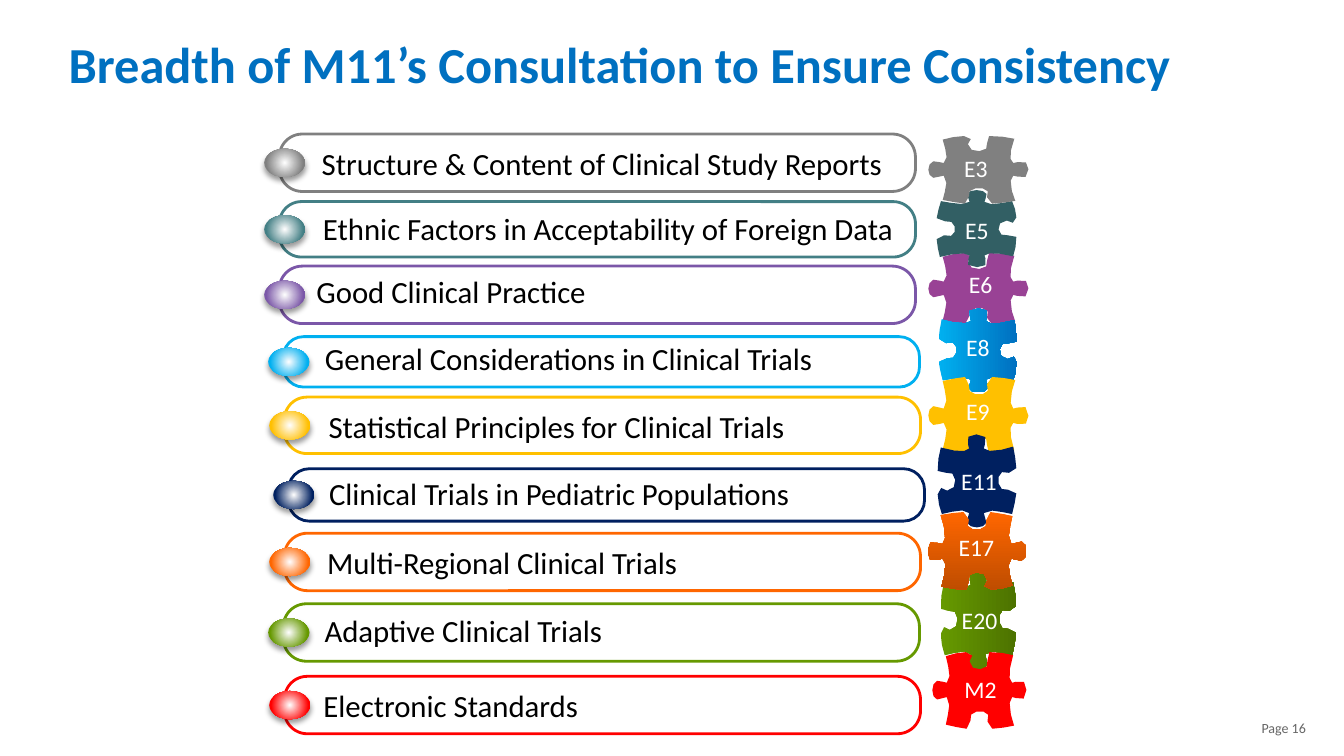
import math

from lxml import etree
from pptx import Presentation
from pptx.dml.color import RGBColor
from pptx.enum.shapes import MSO_SHAPE
from pptx.enum.text import MSO_ANCHOR, PP_ALIGN
from pptx.oxml.ns import qn
from pptx.util import Inches, Pt

ROUND_RECT, OVAL = MSO_SHAPE.ROUNDED_RECTANGLE, MSO_SHAPE.OVAL
LEFT, CENTER, RIGHT = PP_ALIGN.LEFT, PP_ALIGN.CENTER, PP_ALIGN.RIGHT
TOP, MIDDLE = MSO_ANCHOR.TOP, MSO_ANCHOR.MIDDLE
FONT = "Calibri"

WHITE = RGBColor(0xFF, 0xFF, 0xFF)
BLACK = RGBColor(0, 0, 0)
BLUE = RGBColor(0x00, 0x70, 0xC0)
PAGE_GRAY = RGBColor(0x66, 0x66, 0x66)
GRAY = RGBColor(0x80, 0x80, 0x80)
TEAL = RGBColor(0x43, 0x7F, 0x85)
DARK_TEAL = RGBColor(0x32, 0x5F, 0x64)
VIOLET = RGBColor(0x7B, 0x57, 0xA8)
PURPLE = RGBColor(0x99, 0x42, 0x95)
SKY = RGBColor(0x00, 0xB0, 0xF0)
GOLD = RGBColor(0xFF, 0xC0, 0x00)
NAVY = RGBColor(0x00, 0x20, 0x60)
ORANGE = RGBColor(0xFF, 0x66, 0x00)
RUST = RGBColor(0xBF, 0x4D, 0x00)
GREEN = RGBColor(0x66, 0x99, 0x00)
DARK_GREEN = RGBColor(0x4D, 0x73, 0x00)
RED = RGBColor(0xFF, 0x00, 0x00)

BAR_W, PEARL_W, PEARL_H, TEXT_H = 6.31, 0.41, 0.28, 0.46
LABEL_H = 0.38
RIGHTWARD, DOWNWARD = 0, 270

# Topic, colour, bar (left, top, height), text (left, top, width), alignment
TOPICS = [
    ("Structure & Content of Clinical Study Reports", GRAY,
     (2.77, 1.33, 0.57), (2.17, 1.39, 7.6), CENTER),
    ("Ethnic Factors in Acceptability of Foreign Data", TEAL,
     (2.77, 2, 0.55), (2.98, 2.03, 6.1), CENTER),
    ("Good Clinical Practice", VIOLET,
     (2.77, 2.64, 0.57), (3.04, 2.66, 6.1), LEFT),
    ("General Considerations in Clinical Trials", SKY,
     (2.81, 3.34, 0.5), (2.82, 3.32, 5.64), CENTER),
    ("Statistical Principles for Clinical Trials", GOLD,
     (2.82, 3.94, 0.56), (2.7, 4, 5.64), CENTER),
    ("Clinical Trials in Pediatric Populations", NAVY,
     (2.86, 4.65, 0.52), (2.74, 4.66, 5.61), CENTER),
    ("Multi-Regional Clinical Trials", ORANGE,
     (2.82, 5.29, 0.57), (2.86, 5.34, 4.24), CENTER),
    ("Adaptive Clinical Trials", GREEN,
     (2.81, 5.99, 0.57), (3.12, 6.02, 3.61), LEFT),
    ("Electronic Standards", RED,
     (2.82, 6.71, 0.57), (3.11, 6.76, 4.66), LEFT),
]

# Code, box, (sideways, flip x, flip y), colours, gradient angle,
# label (left, top, width); back to front
PIECES = [
    ("E20", (9.33, 5.65, 0.75, 1), (False, False, False),
     (GREEN, DARK_GREEN), RIGHTWARD, (9.39, 5.96, 0.65)),
    ("E6", (9.2, 2.51, 1, 0.71), (True, True, False),
     (PURPLE,), None, (9.48, 2.63, 0.49)),
    ("E5", (9.29, 1.88, 0.79, 0.77), (False, True, True),
     (DARK_TEAL,), None, (9.47, 2.09, 0.44)),
    ("E8", (9.31, 3.06, 0.78, 0.84), (False, True, False),
     (SKY, BLUE), RIGHTWARD, (9.48, 3.25, 0.44)),
    ("E9", (9.2, 3.74, 1, 0.76), (True, True, True),
     (GOLD,), None, (9.4, 3.89, 0.6)),
    ("E11", (9.3, 4.31, 0.78, 0.93), (False, False, False),
     (NAVY,), None, (9.32, 4.58, 0.78)),
    ("E3", (9.2, 1.35, 1, 0.67), (True, True, False),
     (GRAY,), None, (9.43, 1.48, 0.5)),
    ("E17", (9.2, 5.08, 0.99, 0.77), (True, False, True),
     (ORANGE, RUST), DOWNWARD, (9.36, 5.24, 0.65)),
    ("M2", (9.24, 6.47, 0.94, 0.76), (True, True, False),
     (RED,), None, (9.29, 6.65, 0.87)),
]

# Outline of an upright jigsaw piece, 75 across by 100 down:
# each entry is one Bezier curve (two control points and an end point)
PIECE_START = (37, 0)
PIECE_CURVES = [
    ((44, 0), (50, 4), (45, 11)), ((45, 12), (44, 13), (44, 15)),
    ((45, 20), (63, 17), (72, 13)), ((72, 18), (76, 30), (75, 36)),
    ((75, 40), (72, 45), (68, 41)), ((54, 33), (55, 64), (67, 59)),
    ((71, 57), (73, 54), (75, 63)), ((75, 67), (72, 80), (71, 85)),
    ((64, 84), (50, 78), (44, 84)), ((44, 85), (44, 86), (45, 88)),
    ((54, 103), (21, 103), (29, 88)), ((30, 86), (30, 85), (30, 84)),
    ((26, 78), (13, 83), (4, 85)), ((2, 80), (0, 70), (0, 64)),
    ((1, 54), (5, 57), (9, 60)), ((21, 60), (18, 36), (8, 41)),
    ((5, 42), (2, 45), (0, 39)), ((-1, 33), (2, 18), (3, 14)),
    ((18, 19), (28, 19), (30, 15)), ((30, 14), (30, 13), (29, 11)),
    ((25, 3), (31, 0), (37, 0)),
]
STEP_LENGTH = 12


def format_text(sp, text, size, color, align, anchor=TOP, bold=False):
    tf = sp.text_frame
    tf.word_wrap = True
    tf.vertical_anchor = anchor
    p = tf.paragraphs[0]
    p.text = text
    p.alignment = align
    f = p.font
    f.name, f.size, f.bold = FONT, Pt(size), bold
    f.color.rgb = color
    return p


def add_text(s, box, *args, **kwargs):
    sp = s.shapes.add_textbox(*map(Inches, box))
    format_text(sp, *args, **kwargs)


def set_gradient(sp, colors, end=1.0):
    sp.fill.gradient()
    for stop, color, position in zip(sp.fill.gradient_stops, colors, (0, end)):
        stop.color.rgb = color
        stop.position = position


def piece_points():
    """Points along the outline, as fractions of its width and height."""
    points, a = [], PIECE_START
    for b, c, d in PIECE_CURVES:
        length = math.dist(a, b) + math.dist(b, c) + math.dist(c, d)
        steps = max(1, round(length / STEP_LENGTH))
        for i in range(steps):
            t = i / steps
            weights = ((1 - t) ** 3, 3 * t * (1 - t) ** 2, 3 * t * t * (1 - t), t ** 3)
            x, y = (sum(w * q[k] for w, q in zip(weights, (a, b, c, d))) for k in (0, 1))
            points.append((x / 75, y / 100))
        a = d
    return points


def add_piece(s, code, box, turn, colors, angle, label):
    left, top, width, height = box
    sideways, flip_x, flip_y = turn
    outline = []
    for x, y in piece_points():
        if sideways:
            x, y = y, x
        x = 1 - x if flip_x else x
        y = 1 - y if flip_y else y
        outline.append((Inches(left + x * width), Inches(top + y * height)))
    builder = s.shapes.build_freeform(*outline[0])
    builder.add_line_segments(outline[1:], close=True)
    sp = builder.convert_to_shape()
    sp.shadow.inherit = False
    sp.line.fill.background()
    if angle is None:
        sp.fill.solid()
        sp.fill.fore_color.rgb = colors[0]
    else:
        set_gradient(sp, colors)
        sp.fill.gradient_angle = angle
    add_text(s, (*label, LABEL_H), code, 16.9, WHITE, CENTER)


def add_bar(s, color, left, top, height):
    sp = s.shapes.add_shape(ROUND_RECT, *map(Inches, (left, top, BAR_W, height)))
    sp.adjustments[0] = 0.4
    sp.shadow.inherit = False
    sp.fill.background()
    sp.line.color.rgb = color
    sp.line.width = Pt(2)


def add_pearl(s, color, left, top):
    sp = s.shapes.add_shape(OVAL, *map(Inches, (left, top, PEARL_W, PEARL_H)))
    sp.line.fill.background()
    set_gradient(sp, (WHITE, color), end=0.75)
    # Radial gradient from the centre
    grad = sp._element.spPr.find(qn("a:gradFill"))
    grad.remove(grad.find(qn("a:lin")))
    radial = etree.SubElement(grad, qn("a:path"), path="circle")
    etree.SubElement(radial, qn("a:fillToRect"), l="50000", t="50000", r="50000", b="50000")
    # Soft shadow below
    sp.shadow.inherit = False
    effects = sp._element.spPr.find(qn("a:effectLst"))
    shadow = etree.SubElement(effects, qn("a:outerShdw"), blurRad=str(Pt(4)),
                              dist=str(Pt(3)), dir="5400000", rotWithShape="0")
    tint = etree.SubElement(shadow, qn("a:srgbClr"), val=str(BLACK))
    etree.SubElement(tint, qn("a:alpha"), val="40000")


def add_topic(s, topic, color, bar, text, align):
    left, top, height = bar
    add_bar(s, color, left, top, height)
    add_pearl(s, color, left - 0.15, top + (height - PEARL_H) / 2)
    add_text(s, (*text, TEXT_H), topic, 22, BLACK, align)


def main():
    prs = Presentation()
    prs.slide_width, prs.slide_height = Inches(13.33), Inches(7.5)
    s = prs.slides.add_slide(prs.slide_layouts[5])
    # Title and page number
    title = s.shapes.title
    title.left, title.top, title.width, title.height = map(Inches, (0.58, 0.32, 12.75, 0.7))
    p = format_text(title, "Breadth of M11’s Consultation to Ensure Consistency",
                    36, BLUE, LEFT, MIDDLE, bold=True)
    p.line_spacing = 0.9
    add_text(s, (10.05, 7.02, 3, 0.4), "Page 16", 10, PAGE_GRAY, RIGHT, MIDDLE)
    # Jigsaw column
    for piece in PIECES:
        add_piece(s, *piece)
    # Topic bars
    for topic in TOPICS:
        add_topic(s, *topic)
    prs.save("out.pptx")


if __name__ == "__main__":
    main()
